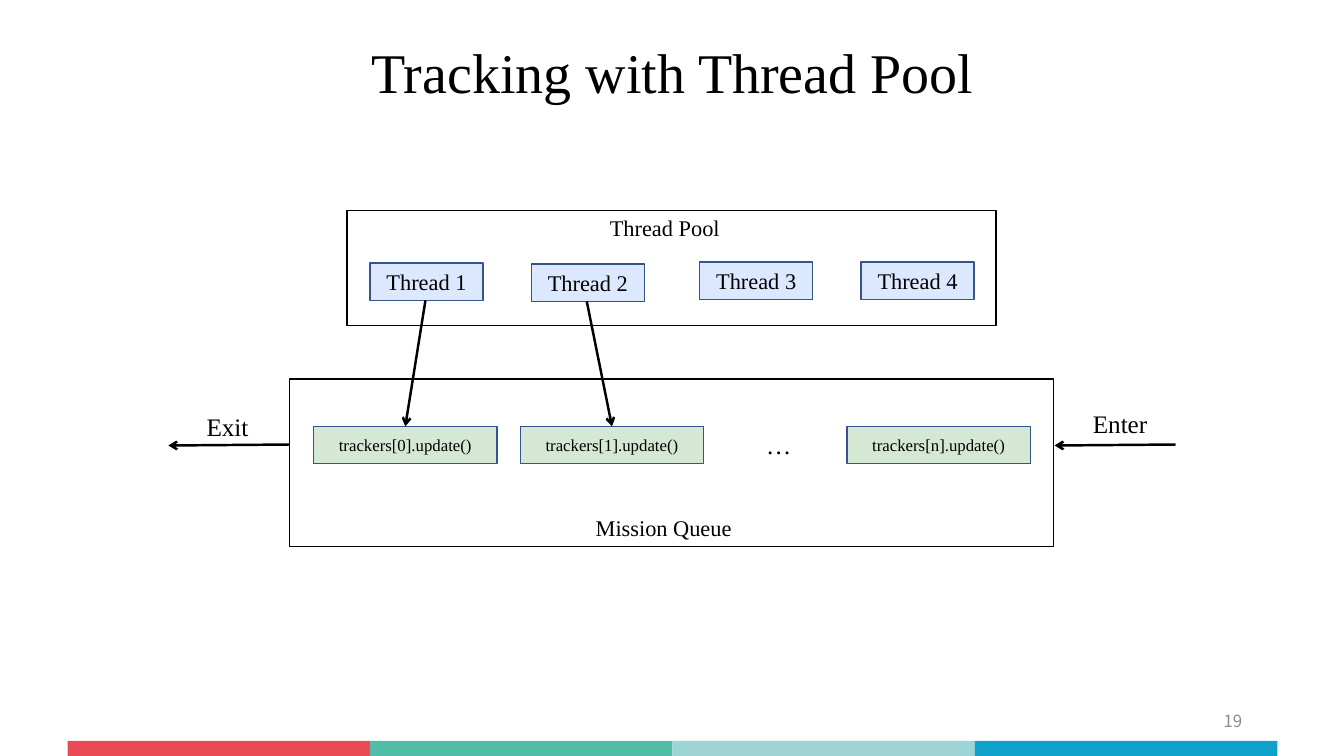
from lxml import etree
from pptx import Presentation
from pptx.dml.color import RGBColor
from pptx.enum.shapes import MSO_CONNECTOR, MSO_SHAPE
from pptx.enum.text import MSO_ANCHOR, MSO_AUTO_SIZE, PP_ALIGN
from pptx.oxml.ns import qn
from pptx.util import Inches, Pt

RECTANGLE = MSO_SHAPE.RECTANGLE
STRAIGHT = MSO_CONNECTOR.STRAIGHT
MIDDLE = MSO_ANCHOR.MIDDLE
TOP = MSO_ANCHOR.TOP
NO_AUTOFIT = MSO_AUTO_SIZE.NONE
FIT_SHAPE = MSO_AUTO_SIZE.SHAPE_TO_FIT_TEXT
LEFT, CENTER, RIGHT = PP_ALIGN.LEFT, PP_ALIGN.CENTER, PP_ALIGN.RIGHT

SERIF = "Times New Roman"
SANS = "Noto Sans CJK SC"
COLORS = {
    "ink": "000000",
    "muted": "8C8C8C",
    "border": "325491",
    "thread": "DBE8FD",
    "tracker": "D5E8D4",
    "red": "EA4A54",
    "green": "52BDA7",
    "aqua": "9ED4D6",
    "blue": "0EA1C9",
}


class SlideBuilder:
    def __init__(self, slide):
        self.slide = slide

    def color(self, name):
        return RGBColor.from_string(COLORS[name])

    def add_text(self, shape, text, size, align, anchor=MIDDLE, font=SERIF, color="ink"):
        frame = shape.text_frame
        frame.vertical_anchor = anchor
        para = frame.paragraphs[0]
        para.alignment = align
        span = para.add_run()
        span.text = text
        span.font.name = font
        span.font.size = Pt(size)
        span.font.color.rgb = self.color(color)
        return para

    def title(self, text, left, top, width, height):
        title = self.slide.shapes.title
        title.left, title.top = Inches(left), Inches(top)
        title.width, title.height = Inches(width), Inches(height)
        title.text_frame.auto_size = NO_AUTOFIT
        self.add_text(title, text, 40, CENTER).line_spacing = 0.9

    def box(self, left, top, width, height, fill=None, line=None):
        box = self.slide.shapes.add_shape(
            RECTANGLE, Inches(left), Inches(top), Inches(width), Inches(height))
        box.shadow.inherit = False
        if fill:
            box.fill.solid()
            box.fill.fore_color.rgb = self.color(fill)
        else:
            box.fill.background()
        if line:
            box.line.color.rgb = self.color(line)
            box.line.width = Pt(1)
        else:
            box.line.fill.background()
        return box

    def node(self, text, left, top, width, fill, size):
        node = self.box(left, top, width, 0.37, fill, "border")
        node.text_frame.word_wrap = False
        self.add_text(node, text, size, CENTER)

    def label(self, text, left, top, width, height, size):
        label = self.slide.shapes.add_textbox(
            Inches(left), Inches(top), Inches(width), Inches(height))
        label.text_frame.word_wrap = False
        label.text_frame.auto_size = FIT_SHAPE
        self.add_text(label, text, size, LEFT, TOP)

    def page_number(self, text, left, top, width, height):
        number = self.slide.shapes.add_textbox(
            Inches(left), Inches(top), Inches(width), Inches(height))
        number.text_frame.word_wrap = True
        self.add_text(number, text, 12, RIGHT, font=SANS, color="muted")

    def arrow(self, start_x, start_y, end_x, end_y):
        arrow = self.slide.shapes.add_connector(
            STRAIGHT, Inches(start_x), Inches(start_y), Inches(end_x), Inches(end_y))
        arrow.line.color.rgb = self.color("ink")
        arrow.line.width = Pt(1.75)
        properties = arrow._element.spPr
        outline = properties.find(qn("a:ln"))
        etree.SubElement(outline, qn("a:tailEnd"), type="arrow")
        etree.SubElement(properties, qn("a:effectLst"))


def main():
    deck = Presentation()
    deck.slide_width, deck.slide_height = Inches(13.33), Inches(7.5)
    page = SlideBuilder(deck.slides.add_slide(deck.slide_layouts[5]))

    for index, name in enumerate(("red", "green", "aqua", "blue")):
        page.box(0.67 + 3 * index, 7.35, 3, 0.15, name)
    page.title("Tracking with Thread Pool", 0.92, 0.4, 11.5, 0.7)
    page.page_number("19", 9.42, 6.95, 3, 0.4)

    page.box(3.44, 2.09, 6.44, 1.14, line="ink")
    page.box(2.87, 3.76, 7.58, 1.66, line="ink")

    threads = ((3.67, 2.61), (5.27, 2.62), (6.94, 2.6), (8.54, 2.6))
    for number, (left, top) in enumerate(threads, 1):
        page.node(f"Thread {number}", left, top, 1.12, "thread", 16)
    for index, left in (("0", 3.11), ("1", 5.16), ("n", 8.4)):
        page.node(f"trackers[{index}].update()", left, 4.23, 1.82, "tracker", 12)

    for label in (
        ("Thread Pool", 5.95, 2.08, 1.35, 0.37, 16),
        ("Mission Queue", 5.81, 5.05, 1.57, 0.37, 16),
        ("…", 7.5, 4.21, 0.45, 0.4, 18),
        ("Exit", 1.95, 4.03, 0.62, 0.4, 18),
        ("Enter", 10.74, 4, 0.75, 0.4, 18),
    ):
        page.label(*label)

    for ends in (
        (2.87, 4.41, 1.67, 4.42),
        (4.22, 2.98, 4.02, 4.23),
        (5.82, 2.99, 6.07, 4.23),
        (11.66, 4.41, 10.46, 4.42),
    ):
        page.arrow(*ends)

    deck.save("out.pptx")


if __name__ == "__main__":
    main()
